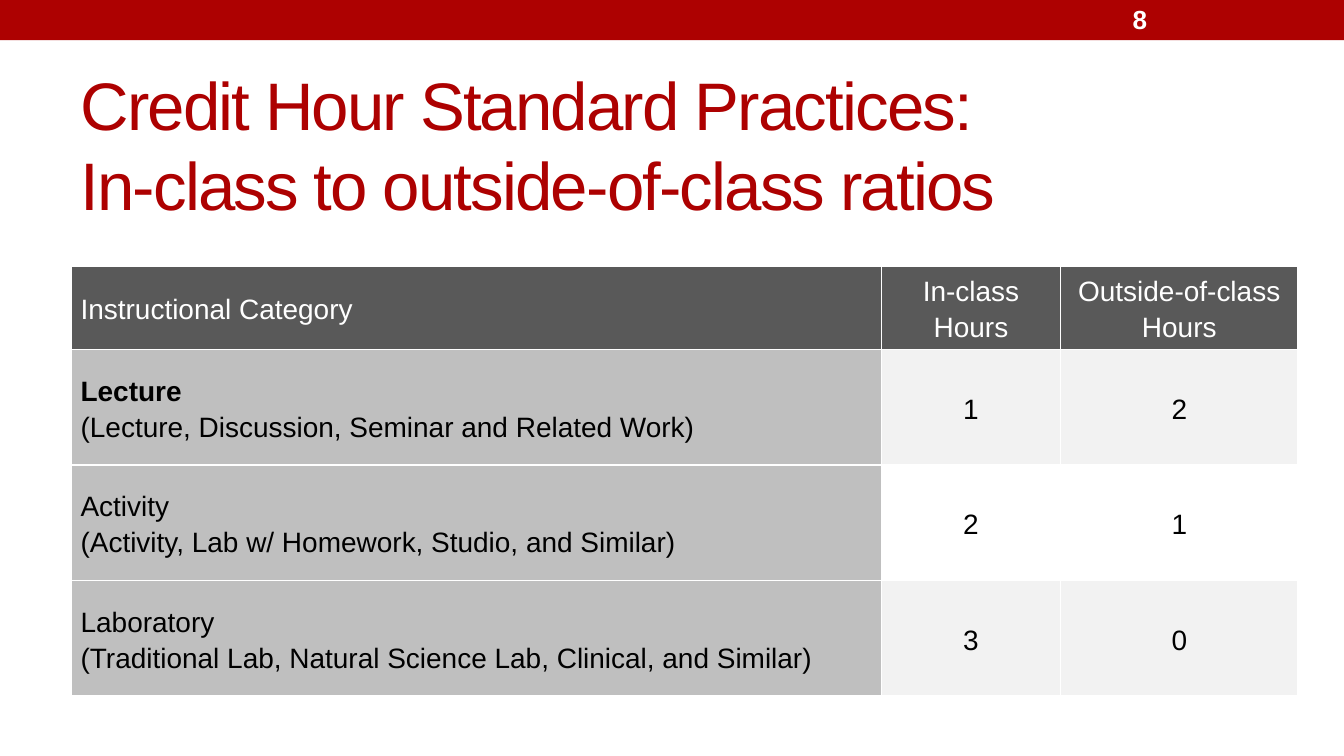
from lxml.etree import SubElement
from pptx import Presentation
from pptx.dml.color import RGBColor
from pptx.enum.shapes import MSO_SHAPE
from pptx.enum.text import MSO_ANCHOR, PP_ALIGN
from pptx.oxml.ns import qn
from pptx.util import Inches, Pt

RED = RGBColor(0xAD, 0x01, 0x01)
WHITE = RGBColor(0xFF, 0xFF, 0xFF)
BLACK = RGBColor(0x00, 0x00, 0x00)
DARK_GRAY = RGBColor(0x59, 0x59, 0x59)
MID_GRAY = RGBColor(0xBF, 0xBF, 0xBF)
LIGHT_GRAY = RGBColor(0xF2, 0xF2, 0xF2)

COLUMN_WIDTHS = [6.03, 1.33, 1.77]
ROW_HEIGHTS = [0.62, 0.86, 0.86, 0.86]
ROWS = [
    ["Instructional Category", "In-class Hours", "Outside-of-class Hours"],
    ["Lecture\n(Lecture, Discussion, Seminar and Related Work)", "1", "2"],
    ["Activity\n(Activity, Lab w/ Homework, Studio, and Similar)", "2", "1"],
    ["Laboratory\n(Traditional Lab, Natural Science Lab, Clinical, and Similar)", "3", "0"],
]


def format_text(text_frame, size, color, bold=False):
    for paragraph in text_frame.paragraphs:
        for run in paragraph.runs:
            run.font.name = "Arial"
            run.font.size = Pt(size)
            run.font.bold = bold
            run.font.color.rgb = color


def add_border(cell, side):
    line = SubElement(cell._tc.get_or_add_tcPr(), qn(f"a:{side}"), w=str(Pt(1)))
    fill = SubElement(line, qn("a:solidFill"))
    SubElement(fill, qn("a:srgbClr"), val=str(WHITE))


presentation = Presentation()
presentation.slide_width = Inches(10)
presentation.slide_height = presentation.slide_width * 9 // 16
slide = presentation.slides.add_slide(presentation.slide_layouts[6])

banner = slide.shapes.add_shape(
    MSO_SHAPE.RECTANGLE, 0, 0, presentation.slide_width, Inches(0.3))
banner.shadow.inherit = False
banner.fill.solid()
banner.fill.fore_color.rgb = RED
banner.line.fill.background()

title = slide.shapes.add_textbox(Inches(0.5), Inches(0.89), Inches(9), Inches(0.36))
title.text_frame.word_wrap = True
title.text_frame.vertical_anchor = MSO_ANCHOR.MIDDLE
title.text_frame.text = "Credit Hour Standard Practices: \vIn-class to outside-of-class ratios"
format_text(title.text_frame, 36, RED)
for run in title.text_frame.paragraphs[0].runs:
    run.font._element.set("spc", "-100")

table = slide.shapes.add_table(
    len(ROWS), len(COLUMN_WIDTHS), Inches(0.53), Inches(1.98),
    Inches(sum(COLUMN_WIDTHS)), Inches(sum(ROW_HEIGHTS))).table
for column, width in zip(table.columns, COLUMN_WIDTHS):
    column.width = Inches(width)
for row, height in zip(table.rows, ROW_HEIGHTS):
    row.height = Inches(height)

for row_index, texts in enumerate(ROWS):
    is_header = row_index == 0
    for column_index, text in enumerate(texts):
        cell = table.cell(row_index, column_index)
        cell.text_frame.text = text
        cell.vertical_anchor = MSO_ANCHOR.MIDDLE
        cell.margin_left = cell.margin_right = Inches(0.07)
        cell.margin_top = cell.margin_bottom = 0
        format_text(cell.text_frame, 15, WHITE if is_header else BLACK)
        for paragraph in cell.text_frame.paragraphs:
            paragraph.line_spacing = 1.15
            paragraph.alignment = PP_ALIGN.CENTER if column_index else PP_ALIGN.LEFT
        for side in ("lnL", "lnR", "lnT", "lnB"):
            add_border(cell, side)
        if is_header:
            color = DARK_GRAY
        elif column_index == 0:
            color = MID_GRAY
        else:
            color = LIGHT_GRAY if row_index % 2 else WHITE
        cell.fill.solid()
        cell.fill.fore_color.rgb = color

table.cell(1, 0).text_frame.paragraphs[0].runs[0].font.bold = True

page_number = slide.shapes.add_textbox(
    Inches(8.33), Inches(0.01), Inches(1.17), Inches(0.27))
page_number.text_frame.word_wrap = True
page_number.text_frame.vertical_anchor = MSO_ANCHOR.MIDDLE
page_number.text_frame.text = "8"
format_text(page_number.text_frame, 14, WHITE, bold=True)

presentation.save("out.pptx")
